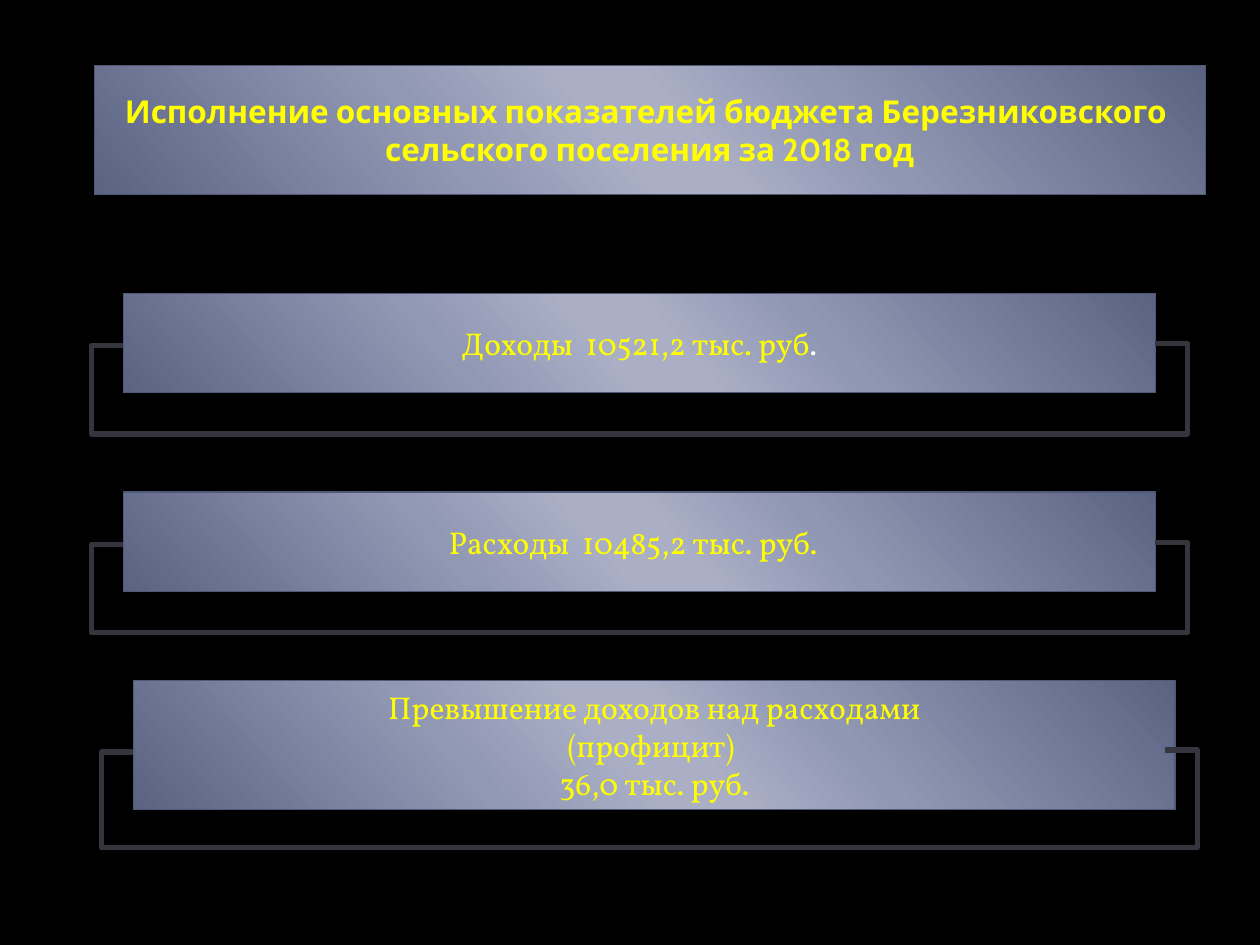
from lxml import etree
from pptx import Presentation
from pptx.dml.color import RGBColor
from pptx.enum.shapes import MSO_CONNECTOR as Link, MSO_SHAPE as Preset
from pptx.enum.text import MSO_ANCHOR as Anchor, PP_ALIGN as Align
from pptx.oxml.ns import qn
from pptx.util import Cm, Pt

YELLOW, WHITE = "FFFF00", "FFFFFF"
PANEL_EDGE, BRACKET_COLOR = "515978", "35353E"
PANEL_STOPS = [(0, "5B6383"), (33, "9097B3"), (47, "AAAFC5"),
               (53, "AAAFC5"), (68, "9198B4"), (100, "5B6383")]
PANEL_ANGLE = 139
BRACKET_WIDTH, BRACKET_RISE = 20.8, 0.04
OVERHANG = 0.65


def rgb(hex_color):
    return RGBColor.from_string(hex_color)


def fill_gradient(panel):
    """Replace the default two stops with the six stops of the panel."""
    panel.fill.gradient()
    gradient = panel._element.spPr.find(qn("a:gradFill"))
    stops = gradient.find(qn("a:gsLst"))
    for stop in list(stops):
        stops.remove(stop)
    for percent, color in PANEL_STOPS:
        stop = etree.SubElement(stops, qn("a:gs"), pos=str(percent * 1000))
        etree.SubElement(stop, qn("a:srgbClr"), val=color)
    gradient.find(qn("a:lin")).set("ang", str(PANEL_ANGLE * 60000))


def add_panel(slide, left, top, width, height, lines, font, bold=False):
    """Each line is a list of (text, colour) runs."""
    panel = slide.shapes.add_shape(
        Preset.RECTANGLE, Cm(left), Cm(top), Cm(width), Cm(height))
    panel.shadow.inherit = False
    fill_gradient(panel)
    panel.line.color.rgb = rgb(PANEL_EDGE)
    panel.line.width = Pt(0.75)

    frame = panel.text_frame
    frame.word_wrap = True
    frame.vertical_anchor = Anchor.MIDDLE
    for index, line in enumerate(lines):
        paragraph = frame.add_paragraph() if index else frame.paragraphs[0]
        paragraph.alignment = Align.CENTER
        for text, color in line:
            run = paragraph.add_run()
            run.text = text
            run.font.name = font
            run.font.size = Pt(18)
            run.font.bold = bold
            run.font.color.rgb = rgb(color)


def add_bracket(slide, left, top, drop):
    """Elbow line that leaves the left side, runs below and ends at the right."""
    bracket = slide.shapes.add_connector(
        Link.ELBOW, Cm(left), Cm(top),
        Cm(left + BRACKET_WIDTH), Cm(top + BRACKET_RISE))
    bracket.line.color.rgb = rgb(BRACKET_COLOR)
    bracket.line.width = Pt(3)

    properties = bracket._element.spPr
    etree.SubElement(properties, qn("a:effectLst"))
    frame = properties.find(qn("a:xfrm"))
    frame.set("rot", "10800000")
    frame.set("flipH", "1")

    # Five segments: left overhang, depth below, right overhang
    geometry = properties.find(qn("a:prstGeom"))
    geometry.set("prst", "bentConnector5")
    guides = geometry.find(qn("a:avLst"))
    if guides is None:
        guides = etree.SubElement(geometry, qn("a:avLst"))
    side = OVERHANG / BRACKET_WIDTH
    for number, ratio in enumerate((-side, -drop / BRACKET_RISE, 1 + side), 1):
        etree.SubElement(guides, qn("a:gd"), name=f"adj{number}",
                         fmla=f"val {round(ratio * 100000)}")


def main():
    deck = Presentation()
    deck.slide_width, deck.slide_height = Cm(25.4), Cm(19.05)
    slide = deck.slides.add_slide(deck.slide_layouts[6])
    slide.background.fill.solid()
    slide.background.fill.fore_color.rgb = rgb("000000")

    # Title
    add_panel(slide, 1.9, 1.32, 22.4, 2.6, [
        [("Исполнение основных показателей бюджета Березниковского ", YELLOW)],
        [("сельского поселения за 2018 год", YELLOW)],
    ], "Cabin", bold=True)

    # Income and expenses
    income = [("Доходы  10521,2 тыс. руб", YELLOW), (".", WHITE)]
    expenses = [("Расходы  10485,2 тыс. руб.  ", YELLOW)]
    for top, amount in ((5.92, income), (9.92, expenses)):
        add_panel(slide, 2.49, top, BRACKET_WIDTH, 2, [amount], "Vollkorn")
        add_bracket(slide, 2.49, top + 1.01, 1.78)

    # Surplus
    add_panel(slide, 2.69, 13.72, 21, 2.6, [
        [("Превышение доходов над расходами", YELLOW)],
        [("(профицит) ", YELLOW)],
        [("36,0 тыс. руб.", YELLOW)],
    ], "Vollkorn")
    add_bracket(slide, 2.69, 15.12, 1.93)

    deck.save("out.pptx")


if __name__ == "__main__":
    main()
